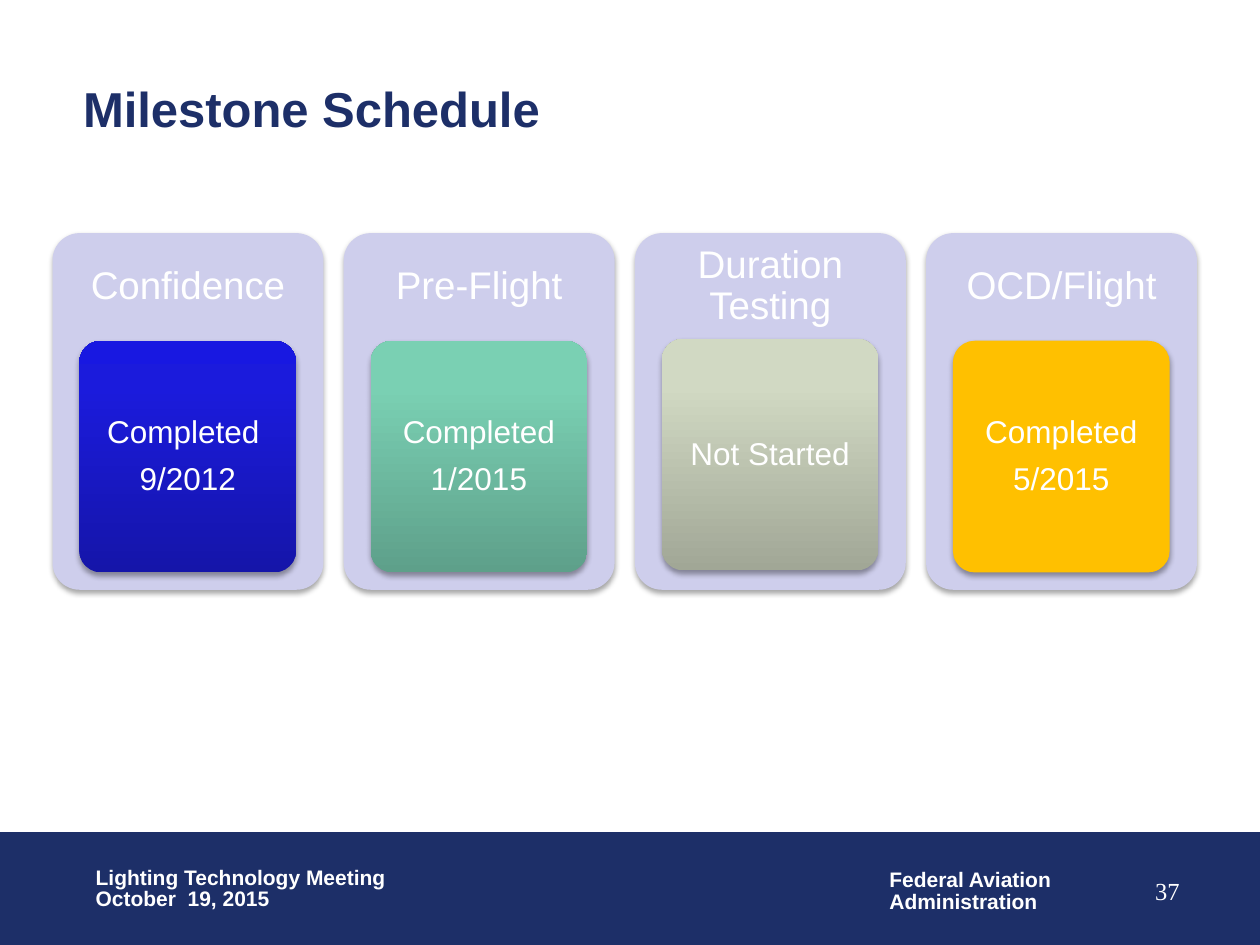
from lxml.etree import SubElement as Sub
from pptx import Presentation
from pptx.dml.color import RGBColor
from pptx.enum.shapes import MSO_SHAPE as Shape
from pptx.enum.text import MSO_ANCHOR as Anchor, PP_ALIGN as Align
from pptx.oxml.ns import qn
from pptx.util import Cm, Pt

NAVY = "1D2F68"
WHITE = "FFFFFF"
CARDS = [
    ("Confidence", ["Completed ", "9/2012"], ["1515A9", "1B1BDC", "1818E1"], 6.87),
    ("Pre-Flight", ["Completed", "1/2015"], ["5EA08A", "7AD0B3", "79D2B4"], 6.87),
    ("Duration Testing", ["Not Started"], ["A1A796", "D1D9C3", "D3DAC4"], 6.83),
    ("OCD/Flight", ["Completed", "5/2015"], ["FFC000"], 6.87),
]


def rgb(code):
    """Turn a hex string into a colour."""
    return RGBColor.from_string(code)


def style(para, size, color=WHITE, bold=False, face="Arial"):
    """Set the font of a paragraph."""
    font = para.font
    font.name, font.size, font.bold = face, Pt(size), bold
    font.color.rgb = rgb(color)


def label(slide, box, lines, size, inset=(0.25, 0.13), wrap=True, anchor=Anchor.TOP,
          align=Align.LEFT, lead=1.0, after=0, **look):
    """Add a text box with one paragraph per line."""
    frame = slide.shapes.add_textbox(*map(Cm, box)).text_frame
    frame.word_wrap, frame.vertical_anchor = wrap, anchor
    frame.margin_left = frame.margin_right = Cm(inset[0])
    frame.margin_top = frame.margin_bottom = Cm(inset[1])
    frame.text = "\n".join(lines)
    for para in frame.paragraphs:
        para.alignment, para.line_spacing = align, lead
        para.space_after = Pt(after)
        style(para, size, **look)


def blend(shape, colors):
    """Fill a shape with a gradient that runs from bottom to top."""
    shape.fill.gradient()
    grad = shape.element.spPr.find(qn("a:gradFill"))
    stops = grad.find(qn("a:gsLst"))
    stops.clear()
    for place, color in zip((0, 80, 100), colors):
        stop = Sub(stops, qn("a:gs"), pos=str(place * 1000))
        Sub(stop, qn("a:srgbClr"), val=color)
    grad.find(qn("a:lin")).set("ang", "16200000")


def shade(shape):
    """Give a shape a soft shadow below it."""
    shape.shadow.inherit = False
    effects = shape.element.spPr.find(qn("a:effectLst"))
    outer = Sub(effects, qn("a:outerShdw"), blurRad="40000", dist="23000",
                dir="5400000", rotWithShape="0")
    Sub(Sub(outer, qn("a:srgbClr"), val="000000"), qn("a:alpha"), val="35000")


def panel(slide, box, colors):
    """Add a rounded panel with a flat or blended fill."""
    shape = slide.shapes.add_shape(Shape.ROUNDED_RECTANGLE, *map(Cm, box))
    shape.adjustments[0] = 0.1
    shape.line.fill.background()
    if len(colors) > 1:
        blend(shape, colors)
    else:
        shape.fill.solid()
        shape.fill.fore_color.rgb = rgb(colors[0])
    shade(shape)


def card(slide, left, head, lines, colors, top):
    """Add a milestone card with its heading and status tile."""
    mid = dict(anchor=Anchor.MIDDLE, align=Align.CENTER, lead=0.9, after=7)
    panel(slide, (left, 4.7, 5.46, 7.19), ["CECEEC"])
    label(slide, (left, 4.7, 5.46, 2.16), [head], 22, inset=(0.23, 0.23), **mid)
    panel(slide, (left + 0.54, top, 4.37, 4.67), colors)
    label(slide, (left + 0.67, top + 0.13, 4.11, 4.42), lines, 18,
          inset=(0.13, 0.1), **mid)


def footer(slide):
    """Add the footer band with its texts and page number."""
    band = slide.shapes.add_shape(Shape.RECTANGLE, 0, Cm(16.78), Cm(25.4), Cm(2.27))
    band.shadow.inherit = False
    band.fill.solid()
    band.fill.fore_color.rgb = band.line.color.rgb = rgb(NAVY)
    band.line.width = Pt(0.75)
    note = dict(size=12, wrap=False, lead=0.85, bold=True)
    label(slide, (17.68, 17.42, 3.81, 1.12), ["Federal Aviation", "Administration"], **note)
    label(slide, (18.75, 17.53, 5.28, 1.27), ["37"], 14, align=Align.RIGHT,
          face="Times New Roman")
    label(slide, (1.68, 17.37, 6.45, 1.12),
          ["Lighting Technology Meeting", "October  19, 2015"], **note)


def heading(slide, text):
    """Place and format the title."""
    title = slide.shapes.title
    title.left, title.top, title.width, title.height = map(Cm, (1.42, 1.32, 22.4, 1.7))
    frame = title.text_frame
    frame.text, frame.vertical_anchor = text, Anchor.MIDDLE
    para = frame.paragraphs[0]
    para.alignment = Align.LEFT
    style(para, 28, NAVY, bold=True)


def main():
    """Build and save the slide."""
    deck = Presentation()
    deck.slide_width, deck.slide_height = Cm(25.4), Cm(19.05)
    slide = deck.slides.add_slide(deck.slide_layouts[5])
    footer(slide)
    heading(slide, "Milestone Schedule")
    for i, item in enumerate(CARDS):
        card(slide, 1.06 + 5.87 * i, *item)
    deck.save("out.pptx")


if __name__ == "__main__":
    main()
